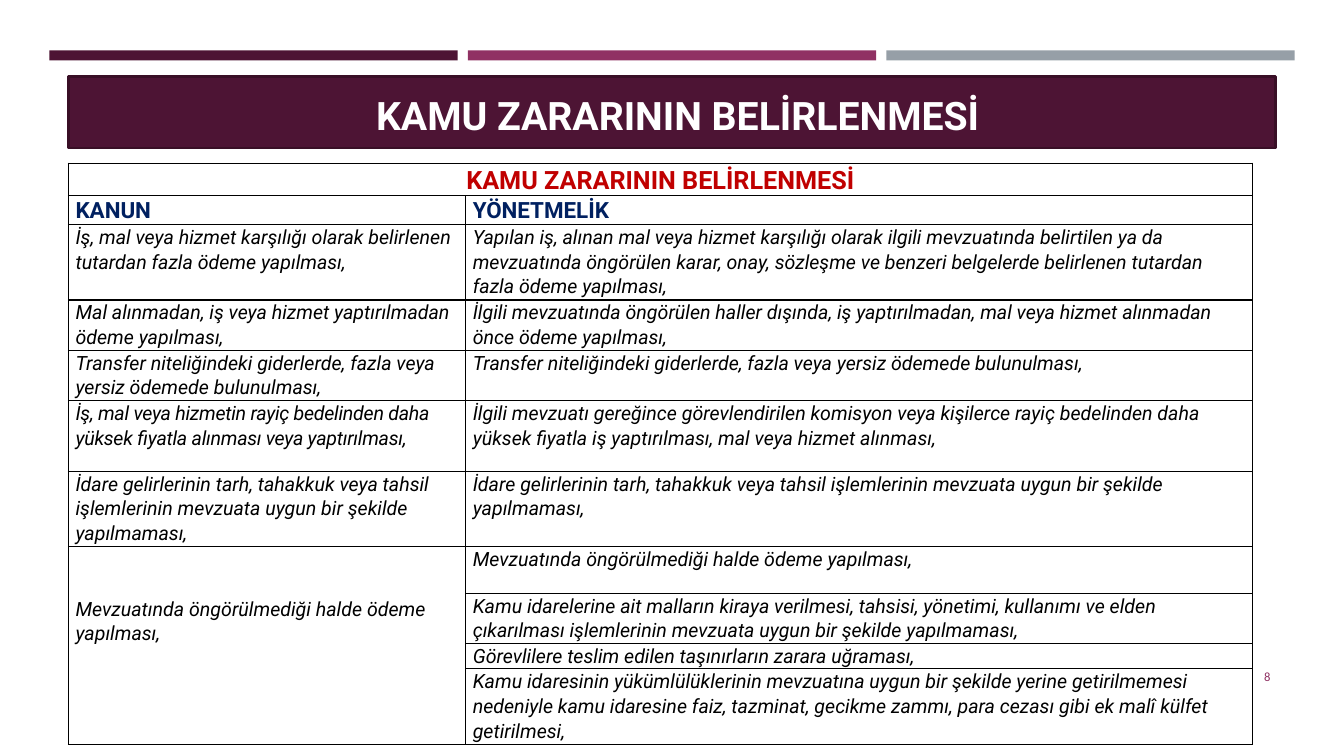
"""Build the slide that compares the law and the regulation on public loss."""
from lxml import etree
from pptx import Presentation
from pptx.dml.color import RGBColor
from pptx.enum import shapes, text
from pptx.oxml import ns
from pptx.util import Inches, Pt


def paint(fill, color):
    fill.solid()
    fill.fore_color.rgb = RGBColor.from_string(color)


def write(para, words, size, color, bold=False, italic=False, face="Roboto"):
    run = para.add_run()
    run.text = words
    font = run.font
    font.name, font.size, font.bold, font.italic = face, Pt(size), bold, italic
    font.color.rgb = RGBColor.from_string(color)
    return run


deck = Presentation()
deck.slide_width, deck.slide_height = Inches(13.33), Inches(7.5)
slide = deck.slides.add_slide(deck.slide_layouts[6])
rect = shapes.MSO_SHAPE.RECTANGLE

for i, color in enumerate(["4D1434", "903163", "969FA7"]):
    bar = slide.shapes.add_shape(
        rect, Inches(0.49 + 4.15 * i), Inches(0.5), Inches(4.05), Inches(0.1))
    bar.shadow.inherit = False
    paint(bar.fill, color)
    bar.line.fill.background()

title = slide.shapes.add_shape(rect, Inches(0.68), Inches(0.76), Inches(11.97), Inches(0.71))
title.shadow.inherit = False
paint(title.fill, "4D1434")
paint(title.line.fill, "390F26")
title.line.width = Pt(1.75)
title.text_frame.vertical_anchor = text.MSO_ANCHOR.MIDDLE
para = title.text_frame.paragraphs[0]
para.alignment = text.PP_ALIGN.CENTER
write(para, " ", 32, "FFFFFF", True)
write(para, "KAMU ZARARININ BELİRLENMESİ", 28, "FFFFFF", True)

page = slide.shapes.add_textbox(Inches(11.55), Inches(6.51), Inches(1.15), Inches(0.4))
page.text_frame.word_wrap = True
page.text_frame.vertical_anchor = text.MSO_ANCHOR.MIDDLE
para = page.text_frame.paragraphs[0]
para.alignment = text.PP_ALIGN.RIGHT
write(para, "8", 9, "903163", face="Calibri")

rows = [
    (0.32, "KAMU ZARARININ BELİRLENMESİ", ""),
    (0.28, "KANUN", "YÖNETMELİK"),
    (0.74, "İş, mal veya hizmet karşılığı olarak belirlenen tutardan fazla ödeme yapılması,",
     "Yapılan iş, alınan mal veya hizmet karşılığı olarak ilgili mevzuatında belirtilen ya da "
     "mevzuatında öngörülen karar, onay, sözleşme ve benzeri belgelerde belirlenen tutardan "
     "fazla ödeme yapılması,"),
    (0.49, "Mal alınmadan, iş veya hizmet yaptırılmadan ödeme yapılması,",
     "İlgili mevzuatında öngörülen haller dışında, iş yaptırılmadan, mal veya hizmet alınmadan "
     "önce ödeme yapılması,"),
    (0.49, "Transfer niteliğindeki giderlerde, fazla veya yersiz ödemede bulunulması,",
     "Transfer niteliğindeki giderlerde, fazla veya yersiz ödemede bulunulması,"),
    (0.7, "İş, mal veya hizmetin rayiç bedelinden daha yüksek fiyatla alınması veya yaptırılması,",
     "İlgili mevzuatı gereğince görevlendirilen komisyon veya kişilerce rayiç bedelinden daha "
     "yüksek fiyatla iş yaptırılması, mal veya hizmet alınması,"),
    (0.74, "İdare gelirlerinin tarh, tahakkuk veya tahsil işlemlerinin mevzuata uygun bir şekilde "
     "yapılmaması,",
     "İdare gelirlerinin tarh, tahakkuk veya tahsil işlemlerinin mevzuata uygun bir şekilde "
     "yapılmaması,"),
    (0.46, "Mevzuatında öngörülmediği halde ödeme yapılması,",
     "Mevzuatında öngörülmediği halde ödeme yapılması,"),
    (0.49, "", "Kamu idarelerine ait malların kiraya verilmesi, tahsisi, yönetimi, kullanımı ve "
     "elden çıkarılması işlemlerinin mevzuata uygun bir şekilde yapılmaması,"),
    (0.25, "", "Görevlilere teslim edilen taşınırların zarara uğraması,"),
    (0.74, "", "Kamu idaresinin yükümlülüklerinin mevzuatına uygun bir şekilde yerine "
     "getirilmemesi nedeniyle kamu idaresine faiz, tazminat, gecikme zammı, para cezası gibi ek "
     "malî külfet getirilmesi,"),
]
looks = [(18, "C00000", True, False), (16, "002060", True, False)]
body = (14, "000000", False, True)

table = slide.shapes.add_table(
    len(rows), 2, Inches(0.68), Inches(1.62), Inches(11.74), Inches(5.7)).table
table.first_row = table.horz_banding = False
table.columns[0].width, table.columns[1].width = Inches(3.94), Inches(7.8)
for r, (height, *words) in enumerate(rows):
    table.rows[r].height = Inches(height)
    look = looks[r] if r < len(looks) else body
    for c, word in enumerate(words):
        cell = table.cell(r, c)
        cell.margin_left = cell.margin_right = Inches(0.07)
        cell.margin_top = cell.margin_bottom = 0
        props = cell._tc.get_or_add_tcPr()
        for side in ("lnL", "lnR", "lnT", "lnB"):
            edge = etree.SubElement(props, ns.qn("a:" + side), w=str(Pt(1)))
            ink = etree.SubElement(edge, ns.qn("a:solidFill"))
            etree.SubElement(ink, ns.qn("a:srgbClr"), val="000000")
        if r == 0:
            paint(cell.fill, "FFFFFF")
        else:
            cell.fill.background()
        para = cell.text_frame.paragraphs[0]
        para.line_spacing = 1.07
        if word:
            write(para, word, *look)
        else:
            para.font.size = Pt(14)

head = table.cell(0, 0)
head.merge(table.cell(0, 1))
head.vertical_anchor = text.MSO_ANCHOR.MIDDLE
head.text_frame.paragraphs[0].alignment = text.PP_ALIGN.CENTER
last = table.cell(7, 0)
last.merge(table.cell(10, 0))
last.margin_top = Inches(0.49)
tight = table.cell(5, 0).text_frame.paragraphs[0].runs[0]
tight._r.get_or_add_rPr().set("spc", "-20")

deck.save("out.pptx")
